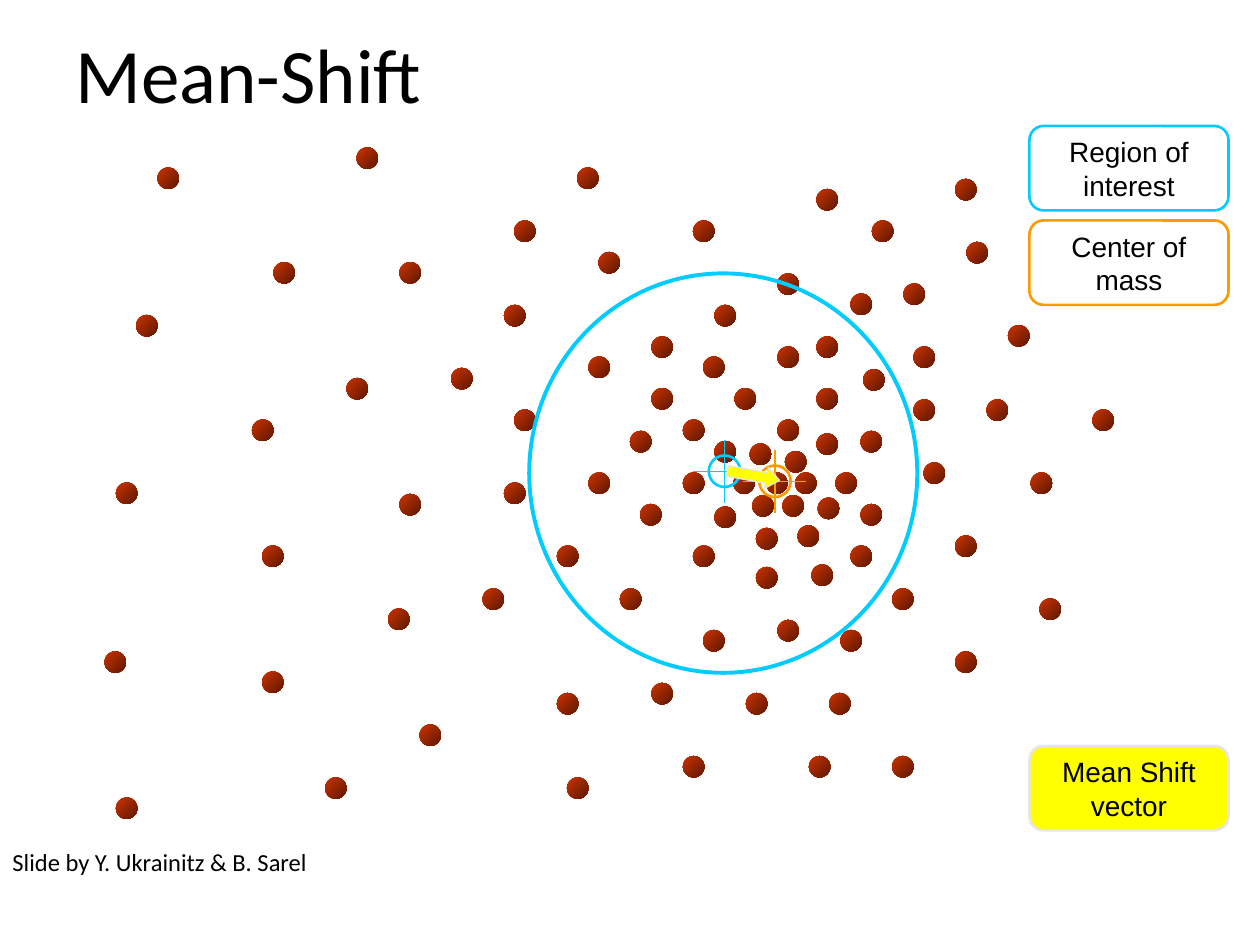
from lxml import etree
from pptx import Presentation
from pptx.dml.color import RGBColor
from pptx.enum.shapes import MSO_CONNECTOR as CONN, MSO_SHAPE as SHAPE
from pptx.enum.text import MSO_ANCHOR as ANCHOR, MSO_AUTO_SIZE as AUTO, PP_ALIGN as ALIGN
from pptx.oxml.ns import qn
from pptx.util import Inches, Pt

CYAN, ORANGE, YELLOW, GRAY, BLACK = "00CCFF", "FF9900", "FFFF00", "E7E6E6", "000000"
DOT_DARK, DOT_LIGHT = "5E1800", "CC3300"
DOT_SIZE = 0.17

# Left and top of each data point
DOTS = [
    # Dense cluster
    (6.08, 3.75), (6.31, 3.75), (6.23, 3.58), (5.95, 3.52), (6.21, 3.93), (5.97, 3.93),
    (6.49, 3.95), (5.82, 3.75), (6.63, 3.75), (6.48, 3.44), (6.17, 3.33), (6.33, 4.17),
    (6, 4.19), (5.67, 4.02), (5.42, 3.75), (5.67, 3.5), (6.83, 4), (6.75, 4.33),
    (6.44, 4.48), (6, 4.5), (5.5, 4.33), (5.08, 4), (5, 3.42), (5.42, 3.33),
    (5.83, 3.08), (6.48, 3.08), (6.17, 2.75), (5.17, 3.08), (5.58, 2.83), (6.17, 2.17),
    (5.67, 2.42), (6.48, 2.67), (6.48, 1.5), (6.75, 2.33), (6.85, 2.93), (6.83, 3.42),
    # Right side
    (7.25, 3.17), (7.25, 2.75), (7.17, 2.25), (6.92, 1.75), (7.58, 1.42), (7.67, 1.92),
    (8, 2.58), (7.33, 3.67), (7.83, 3.17), (8.67, 3.25), (7.58, 4.25), (8.18, 3.75),
    (7.08, 4.67), (8.25, 4.75), (7.58, 5.17), (6.67, 5), (6.17, 4.92), (6.58, 5.5),
    # Bottom and middle
    (7.08, 6), (6.42, 6), (5.92, 5.5), (5.58, 5), (4.92, 4.67), (5.17, 5.42),
    (5.42, 6), (4.5, 6.17), (4.42, 5.5), (3.83, 4.67), (4.42, 4.33), (4.67, 3.75),
    (4.08, 3.25), (4.67, 2.83), (5.17, 2.67), (4.75, 2), (5.5, 1.75), (4.58, 1.33),
    # Sparse left side
    (4.08, 1.75), (4, 2.42), (3.58, 2.92), (4, 3.83), (3.17, 3.92), (3.08, 4.83),
    (3.33, 5.75), (2.58, 6.17), (2.08, 5.33), (2.08, 4.33), (2.75, 3), (3.17, 2.08),
    (2.17, 2.08), (2, 3.33), (0.83, 5.17), (0.92, 6.33), (0.92, 3.83), (1.08, 2.5),
    (1.25, 1.33), (2.83, 1.17),
]

# Top, text lines, fill and outline of each label
LABELS = [
    (1, ("Region of", "interest"), None, CYAN),
    (1.75, ("Center of", "mass"), None, ORANGE),
    (5.92, ("Mean Shift", "vector"), YELLOW, GRAY),
]


def rgb(color):
    return RGBColor.from_string(color)


def add_shape(shapes, kind, x, y, w, h, fill=None, line=None, width=1.5):
    sp = shapes.add_shape(kind, Inches(x), Inches(y), Inches(w), Inches(h))
    sp.shadow.inherit = False
    if fill:
        sp.fill.solid()
        sp.fill.fore_color.rgb = rgb(fill)
    else:
        sp.fill.background()
    if line:
        sp.line.color.rgb = rgb(line)
        sp.line.width = Pt(width)
    else:
        sp.line.fill.background()
    return sp


def add_line(shapes, x1, y1, x2, y2, color):
    cn = shapes.add_connector(CONN.STRAIGHT, Inches(x1), Inches(y1), Inches(x2), Inches(y2))
    cn.line.color.rgb = rgb(color)
    cn.line.width = Pt(0.75)
    etree.SubElement(cn._element.spPr, qn("a:effectLst"))


def add_dot(shapes, x, y):
    sp = add_shape(shapes, SHAPE.OVAL, x, y, DOT_SIZE, DOT_SIZE)
    sp.fill.gradient()
    sp.fill.gradient_angle = 315
    for stop, color in zip(sp.fill.gradient_stops, (DOT_LIGHT, DOT_DARK)):
        stop.color.rgb = rgb(color)


def add_crosshair(shapes, cx, cy, color):
    radius, arm = 0.125, 0.25
    add_shape(shapes, SHAPE.OVAL, cx - radius, cy - radius, 2 * radius, 2 * radius, line=color)
    add_line(shapes, cx, cy - arm, cx, cy + arm, color)
    add_line(shapes, cx - arm, cy, cx + arm, cy, color)


def set_text(tf, lines, size, font, align=ALIGN.LEFT):
    for i, text in enumerate(lines):
        p = tf.add_paragraph() if i else tf.paragraphs[0]
        p.text = text
        p.alignment = align
        p.font.size = Pt(size)
        p.font.name = font
        p.font.color.rgb = rgb(BLACK)


def add_label(shapes, top, lines, fill, line):
    sp = add_shape(shapes, SHAPE.ROUNDED_RECTANGLE, 8.17, top, 1.58, 0.67, fill, line)
    tf = sp.text_frame
    tf.word_wrap = False
    tf.vertical_anchor = ANCHOR.MIDDLE
    set_text(tf, lines, 16, "Arial", ALIGN.CENTER)


def add_text(shapes, x, y, w, h, text, size):
    tf = shapes.add_textbox(Inches(x), Inches(y), Inches(w), Inches(h)).text_frame
    set_text(tf, [text], size, "Calibri")
    return tf


def main():
    prs = Presentation()
    prs.slide_width, prs.slide_height = Inches(10), Inches(7.5)
    shapes = prs.slides.add_slide(prs.slide_layouts[6]).shapes

    # Data points
    for x, y in DOTS:
        add_dot(shapes, x, y)

    # Region of interest with its center
    region = shapes.add_group_shape().shapes
    add_shape(region, SHAPE.OVAL, 4.2, 2.17, 3.08, 3.17, line=CYAN, width=2.25)
    add_crosshair(region, 5.75, 3.74, CYAN)

    # Labels
    for label in LABELS:
        add_label(shapes, *label)

    # Center of mass
    add_crosshair(shapes.add_group_shape().shapes, 6.15, 3.82, ORANGE)

    # Mean shift vector
    arrow = add_shape(shapes, SHAPE.RIGHT_ARROW, 5.77, 3.69, 0.42, 0.17, YELLOW, GRAY, 0.75)
    arrow.adjustments[1] = 0.625
    arrow.rotation = 10.3

    # Title and credit
    tf = add_text(shapes, 0.5, 0, 9, 1.25, "Mean-Shift", 44)
    tf.word_wrap = True
    tf.vertical_anchor = ANCHOR.MIDDLE
    tf.paragraphs[0].line_spacing = 0.9
    tf = add_text(shapes, 0, 6.67, 3.01, 0.34, "Slide by Y. Ukrainitz & B. Sarel", 14)
    tf.word_wrap = False
    tf.auto_size = AUTO.SHAPE_TO_FIT_TEXT

    prs.save("out.pptx")


if __name__ == "__main__":
    main()
